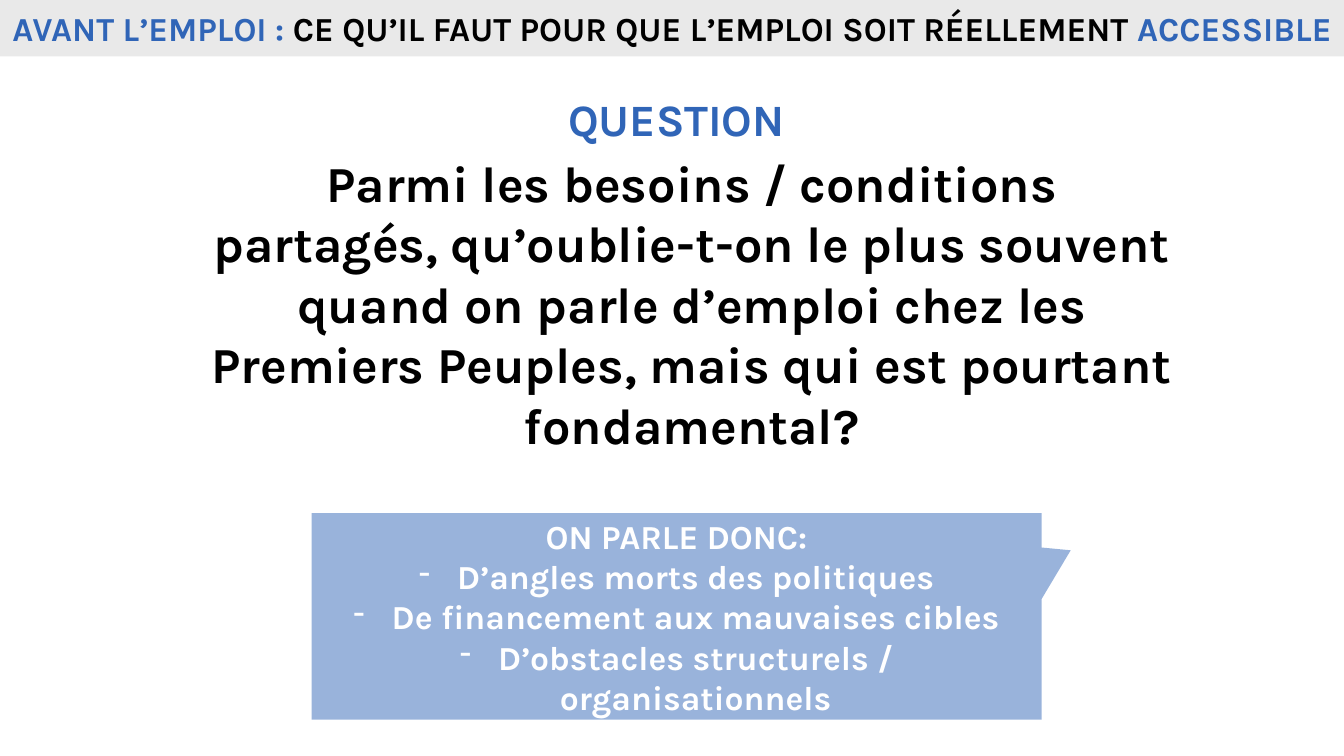
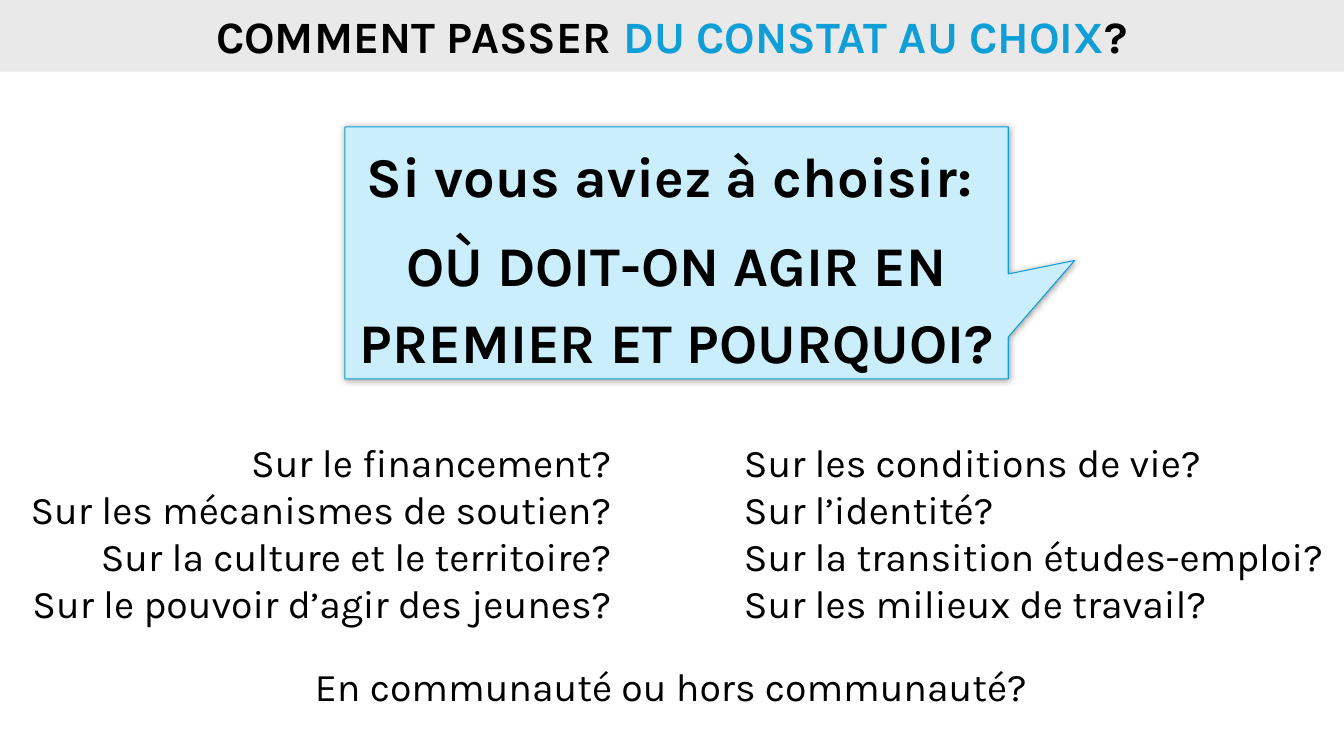
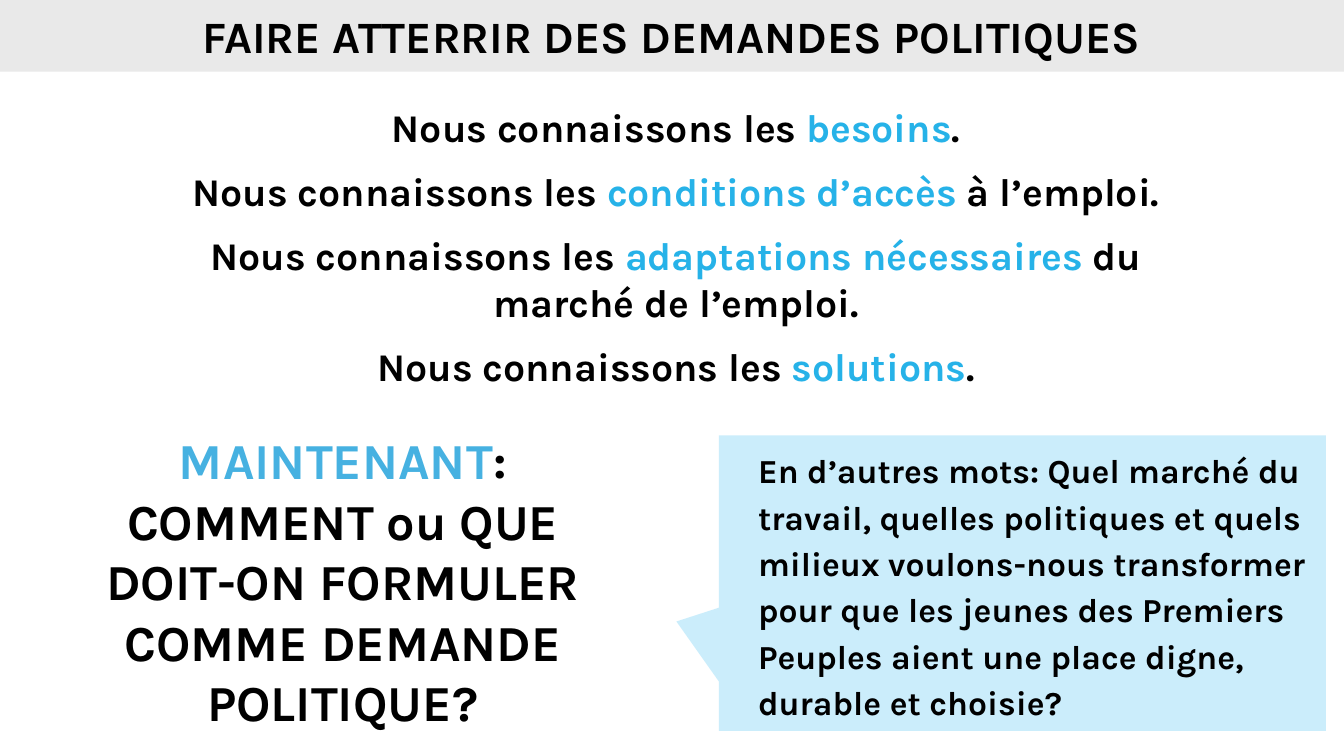
from lxml.etree import SubElement
from pptx import Presentation
from pptx.dml.color import RGBColor
from pptx.enum.shapes import MSO_SHAPE as Preset
from pptx.enum.text import MSO_ANCHOR as Anchor, MSO_AUTO_SIZE as AutoSize, PP_ALIGN as Align
from pptx.oxml.ns import qn
from pptx.util import Inches, Pt

FONT = "Karla"
BLACK, WHITE, BAND = "000000", "FFFFFF", "E9E9E9"
ROYAL, OCEAN, SKY, AZURE = "3065B7", "0F9ED5", "26B2E8", "46B1E1"
PALE, CYAN = "CAEEFB", "96DCF8"
WIDTH = 13.33


def paint(target, colour):
    target.rgb = RGBColor.from_string(colour)


def write(shape, paragraphs, size, bold=True, align=Align.CENTER, anchor=Anchor.MIDDLE,
          grow=False, spacing=None, after=None):
    frame = shape.text_frame
    frame.word_wrap = True
    frame.vertical_anchor = anchor
    frame.auto_size = AutoSize.SHAPE_TO_FIT_TEXT if grow else AutoSize.NONE
    for number, runs in enumerate(paragraphs):
        paragraph = frame.add_paragraph() if number else frame.paragraphs[0]
        paragraph.alignment = align
        if spacing:
            paragraph.line_spacing = spacing
        if after:
            paragraph.space_after = Pt(after)
        for words, colour in runs:
            run = paragraph.add_run()
            run.text = words
            run.font.name = FONT
            run.font.size = Pt(size)
            run.font.bold = bold
            paint(run.font.color, colour)


deck = Presentation()
deck.slide_width, deck.slide_height = Inches(WIDTH), Inches(7.5)

headings = [
    (0.56, 24, [("AVANT L’EMPLOI : ", ROYAL),
                ("CE QU’IL FAUT POUR QUE L’EMPLOI SOIT RÉELLEMENT ", BLACK),
                ("ACCESSIBLE", ROYAL)]),
    (0.71, 32, [("COMMENT PASSER ", BLACK), ("DU CONSTAT AU CHOIX", OCEAN), ("?", BLACK)]),
    (0.71, 32, [("FAIRE ATTERRIR DES DEMANDES POLITIQUES", BLACK)]),
]
slides = []
for height, size, runs in headings:
    slide = deck.slides.add_slide(deck.slide_layouts[6])
    band = slide.shapes.add_shape(Preset.RECTANGLE, 0, 0, Inches(WIDTH), Inches(height))
    band.shadow.inherit = False
    band.fill.solid()
    paint(band.fill.fore_color, BAND)
    band.line.fill.background()
    write(band, [runs], size)
    slides.append(slide)
question, choice, demand = slides

callouts = []
for slide, box, tip, colour, opacity in [
    (question, (3.09, 5.09, 7.24, 2.05), (0.54, -0.32), ROYAL, 49),
    (choice, (3.42, 1.26, 6.58, 2.5), (0.6, 0.03), PALE, 100),
    (demand, (7.13, 4.32, 6.02, 2.93), (-0.57, 0.13), CYAN, 49),
]:
    callout = slide.shapes.add_shape(Preset.RECTANGULAR_CALLOUT, *map(Inches, box))
    callout.adjustments[0], callout.adjustments[1] = tip
    callout.shadow.inherit = False
    callout.fill.solid()
    paint(callout.fill.fore_color, colour)
    if opacity < 100:
        tint = callout._element.spPr.find(".//" + qn("a:srgbClr"))
        SubElement(tint, qn("a:alpha"), val=str(opacity * 1000))
    callout.line.fill.background()
    callouts.append(callout)
topics, choose, reworded = callouts

write(topics, [[(words, WHITE)] for words in [
    "ON PARLE DONC:",
    "D’angles morts des politiques",
    "De financement aux mauvaises cibles",
    "D’obstacles structurels / organisationnels",
]], 24)
for topic in topics.text_frame.paragraphs[1:]:
    properties = topic._p.get_or_add_pPr()
    properties.set("marL", str(Inches(0.38)))
    properties.set("indent", str(Inches(-0.38)))
    SubElement(properties, qn("a:buFontTx"))
    SubElement(properties, qn("a:buChar"), char="-")

choose.line.fill.solid()
paint(choose.line.fill.fore_color, OCEAN)
choose.line.width = Pt(0.75)
effects = choose._element.spPr.find(qn("a:effectLst"))
glow = SubElement(effects, qn("a:outerShdw"), blurRad=str(Pt(5)), dist="0", dir="0",
                  algn="ctr", rotWithShape="0")
SubElement(SubElement(glow, qn("a:srgbClr"), val=BLACK), qn("a:alpha"), val="40000")
write(choose, [[("Si vous aviez à choisir: ", BLACK)],
               [("OÙ DOIT-ON AGIR EN PREMIER ET POURQUOI?", BLACK)]],
      40, anchor=Anchor.TOP, grow=True, spacing=1.15, after=8)

write(reworded, [[("En d’autres mots: Quel marché du travail, quelles politiques et quels milieux "
                   "voulons-nous transformer pour que les jeunes des Premiers Peuples aient une "
                   "place digne, durable et choisie?", BLACK)]],
      24, align=Align.LEFT, spacing=1.15, after=8)
reworded.text_frame.paragraphs[0]._p.get_or_add_pPr().set("marL", str(Inches(0.29)))

known = [
    [("Nous connaissons les ", BLACK), (stressed, SKY), (ending, BLACK)]
    for stressed, ending in [
        ("besoins", "."),
        ("conditions d’accès ", "à l’emploi."),
        ("adaptations nécessaires ", "du marché de l’emploi."),
        ("solutions", "."),
    ]
]
means = ["Sur le financement?", "Sur les mécanismes de soutien?",
         "Sur la culture et le territoire?", "Sur le pouvoir d’agir des jeunes?"]
settings = ["Sur les conditions de vie?", "Sur l’identité?",
            "Sur la transition études-emploi?", "Sur les milieux de travail?"]
top = dict(anchor=Anchor.TOP, grow=True)

for slide, box, paragraphs, size, style in [
    (question, (4.6, 0.9, 4.22, 0.56), [[("QUESTION", ROYAL)]], 32, {}),
    (question, (1.99, 1.7, 9.74, 2.61),
     [[("Parmi les besoins / conditions partagés, qu’oublie-t-on le plus souvent quand on parle "
        "d’emploi chez les Premiers Peuples, mais qui est pourtant fondamental?", BLACK)]], 36, {}),
    (choice, (-0.42, 4.3, 6.58, 1.99), [[(words, BLACK)] for words in means], 28,
     dict(top, bold=False, align=Align.RIGHT)),
    (choice, (7.28, 4.3, 6.58, 1.99), [[(words, BLACK)] for words in settings], 28,
     dict(top, bold=False, align=Align.LEFT)),
    (choice, (2.91, 6.52, 7.58, 0.57), [[("En communauté ou hors communauté? ", BLACK)]], 28,
     dict(top, bold=False)),
    (demand, (1.67, 0.98, 10.07, 2.96), known, 28, dict(top, after=12)),
    (demand, (0.59, 4.21, 5.62, 3.13),
     [[("MAINTENANT", AZURE),
       (": COMMENT ou QUE DOIT-ON FORMULER COMME DEMANDE POLITIQUE?", BLACK)]], 36, top),
]:
    write(slide.shapes.add_textbox(*map(Inches, box)), paragraphs, size, **style)

deck.save("out.pptx")
